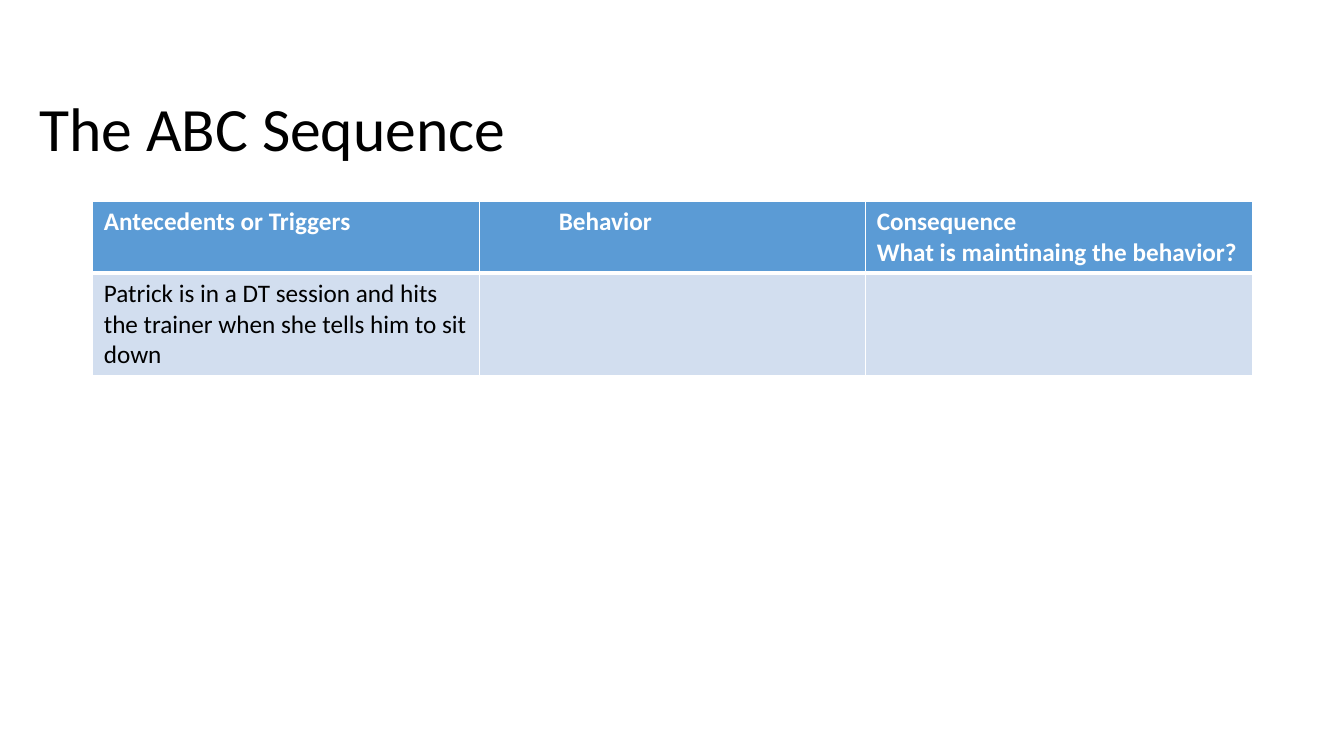
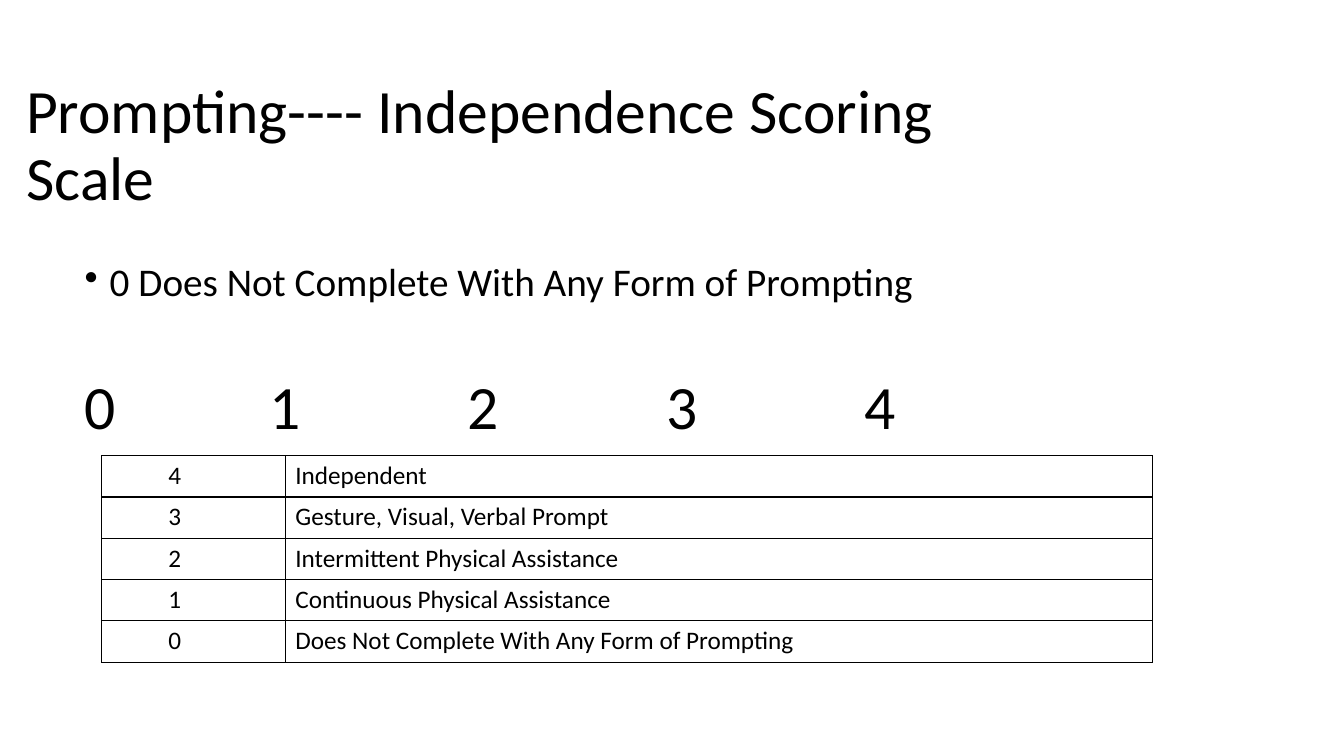
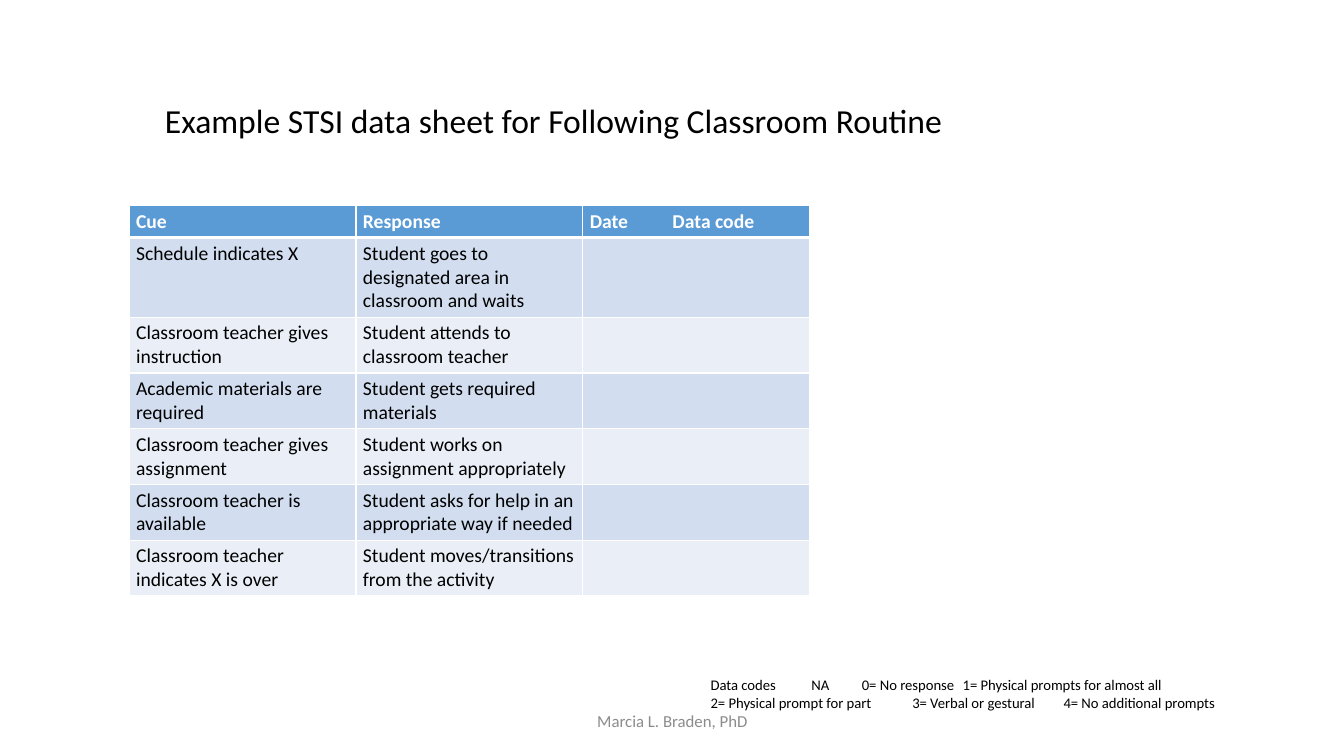
import pptx
import pptx.util
import pptx.dml.color
import pptx.enum.text
import pptx.oxml
import pptx.oxml.ns

Inches = pptx.util.Inches
Pt = pptx.util.Pt
RGBColor = pptx.dml.color.RGBColor
PP_ALIGN = pptx.enum.text.PP_ALIGN
MIDDLE = pptx.enum.text.MSO_ANCHOR.MIDDLE
qn = pptx.oxml.ns.qn

FONT = "Calibri"
BLACK = RGBColor(0x00, 0x00, 0x00)
WHITE = RGBColor(0xFF, 0xFF, 0xFF)
GREY = RGBColor(0x8C, 0x8C, 0x8C)
HEADER_BLUE = RGBColor(0x5B, 0x9B, 0xD5)
BANDS = (RGBColor(0xD2, 0xDE, 0xEF), RGBColor(0xEA, 0xEF, 0xF7))

ABC_ROWS = [
    ("Antecedents or Triggers", "Behavior",
     "Consequence\nWhat is maintinaing the behavior?"),
    ("Patrick is in a DT session and hits the trainer when she tells him to sit down", "", ""),
]
SCORES = [
    ("4", "Independent"),
    ("3", "Gesture, Visual, Verbal Prompt"),
    ("2", "Intermittent Physical Assistance"),
    ("1", "Continuous Physical Assistance"),
    ("0", "Does Not Complete With Any Form of Prompting"),
]
LOWEST_SCORE = "0 Does Not Complete With Any Form of Prompting"
ROUTINE_ROWS = [
    ("Cue", "Response", "Date\tData code"),
    ("Schedule indicates X", "Student goes to designated area in classroom and waits", ""),
    ("Classroom teacher gives instruction", "Student attends to classroom teacher", ""),
    ("Academic materials are required", "Student gets required materials", ""),
    ("Classroom teacher gives assignment", "Student works on assignment appropriately", ""),
    ("Classroom teacher is available", "Student asks for help in an appropriate way if needed", ""),
    ("Classroom teacher indicates X is over", "Student moves/transitions from the activity", ""),
]
DATA_CODES = [
    ("Data codes \tNA \t0= No response\t1= Physical prompts for almost all", (1, 1.5, 2.5)),
    ("2= Physical prompt for part\t3= Verbal or gestural\t4= No additional prompts", (2, 3.5)),
]
AUTHOR = "Marcia L. Braden, PhD"


def write(paragraph, text, size, color=BLACK, bold=False):
    run = paragraph.add_run()
    run.text = text
    run.font.name = FONT
    run.font.size = Pt(size)
    run.font.color.rgb = color
    run.font.bold = bold


def set_tabs(paragraph, stops):
    tabs = pptx.oxml.parse_xml(f"<a:tabLst {pptx.oxml.ns.nsdecls('a')}/>")
    for stop in stops:
        tab = tabs.makeelement(qn("a:tab"), {"pos": str(Inches(stop)), "algn": "l"})
        tabs.append(tab)
    paragraph._p.get_or_add_pPr().append(tabs)


def set_indent(paragraph, left, bullet=False):
    properties = paragraph._p.get_or_add_pPr()
    properties.set("marL", str(Inches(left)))
    properties.set("indent", str(-Inches(left) if bullet else 0))
    if bullet:
        properties.append(properties.makeelement(qn("a:buChar"), {"char": "•"}))


def set_borders(cell, color, widths):
    properties = cell._tc.get_or_add_tcPr()
    for side, width in zip("LRTB", widths):
        properties.append(pptx.oxml.parse_xml(
            f'<a:ln{side} {pptx.oxml.ns.nsdecls("a")} w="{Pt(width)}">'
            f'<a:solidFill><a:srgbClr val="{color}"/></a:solidFill></a:ln{side}>'))


def add_titled_slide(deck, title, box, size=44, align=PP_ALIGN.LEFT):
    slide = deck.slides.add_slide(deck.slide_layouts[5])
    heading = slide.shapes.title
    heading.left, heading.top, heading.width, heading.height = map(Inches, box)
    frame = heading.text_frame
    frame.auto_size = pptx.enum.text.MSO_AUTO_SIZE.NONE
    frame.vertical_anchor = MIDDLE
    paragraph = frame.paragraphs[0]
    paragraph.alignment = align
    paragraph.line_spacing = 0.9
    write(paragraph, title, size)
    return slide


def add_text_frame(slide, box):
    frame = slide.shapes.add_textbox(*map(Inches, box)).text_frame
    frame.word_wrap = True
    return frame


def add_grid(slide, rows, corner, widths, heights, size, margins=(0.1, 0.05), header=True):
    left, top = corner
    grid = slide.shapes.add_table(
        len(rows), len(widths), Inches(left), Inches(top),
        Inches(sum(widths)), Inches(sum(heights))).table
    grid.first_row = header
    grid.horz_banding = False
    for column, width in zip(grid.columns, widths):
        column.width = Inches(width)
    for r, (texts, height) in enumerate(zip(rows, heights)):
        grid.rows[r].height = Inches(height)
        in_header = header and r == 0
        for c, text in enumerate(texts):
            cell = grid.cell(r, c)
            cell.margin_left = cell.margin_right = Inches(margins[0])
            cell.margin_top = cell.margin_bottom = Inches(margins[1])
            if header:
                set_borders(cell, WHITE, (1, 1, 3 if r == 1 else 1, 3 if r == 0 else 1))
                cell.fill.solid()
                cell.fill.fore_color.rgb = HEADER_BLUE if in_header else BANDS[(r - 1) % 2]
            else:
                set_borders(cell, BLACK, (1, 1, 1, 1))
                cell.fill.background()
            for i, line in enumerate(text.split("\n") if text else ()):
                frame = cell.text_frame
                paragraph = frame.add_paragraph() if i else frame.paragraphs[0]
                write(paragraph, line, size, WHITE if in_header else BLACK, in_header)
    return grid


def build_abc(deck):
    slide = add_titled_slide(deck, "The ABC Sequence", (0.29, 0.72, 10.51, 1.18))
    grid = add_grid(slide, ABC_ROWS, (0.92, 2), [11.5 / 3] * 3, (0.7, 1), 18, (0.11, 0.05))
    set_indent(grid.cell(0, 1).text_frame.paragraphs[0], 0.68)


def build_scoring(deck):
    slide = add_titled_slide(deck, "Prompting---- Independence Scoring Scale",
                             (0.16, 0.87, 10.51, 1.18))
    frame = add_text_frame(slide, (0.74, 2.56, 11.47, 3.94))
    lowest, scale = frame.paragraphs[0], frame.add_paragraph()
    for paragraph, gap in ((lowest, 10), (scale, 51)):
        paragraph.line_spacing = 0.9
        paragraph.space_before = Pt(gap)
    set_indent(lowest, 0.25, bullet=True)
    write(lowest, LOWEST_SCORE, 28)
    set_tabs(scale, [1.83 + 1.97 * i for i in range(len(SCORES) - 1)])
    write(scale, "\t".join(score for score, _ in reversed(SCORES)), 44)
    grid = add_grid(slide, SCORES, (1.01, 4.52), (1.82, 8.6), [0.41] * len(SCORES), 18,
                    header=False)
    for r in range(len(SCORES)):
        set_indent(grid.cell(r, 0).text_frame.paragraphs[0], 0.56)


def build_routine(deck):
    slide = add_titled_slide(deck, "Example STSI data sheet for Following Classroom Routine",
                             (0.16, 0.75, 10.66, 0.94), 24, PP_ALIGN.CENTER)
    grid = add_grid(slide, ROUTINE_ROWS, (1.28, 2.04), [2.25] * 3,
                    [0.3, 0.78] + [0.54] * 5, 14, (0.07, 0.04))
    set_tabs(grid.cell(0, 2).text_frame.paragraphs[0], [0.82])
    footer = add_text_frame(slide, (4.42, 6.95, 4.5, 0.4))
    footer.vertical_anchor = MIDDLE
    footer.paragraphs[0].alignment = PP_ALIGN.CENTER
    write(footer.paragraphs[0], AUTHOR, 12, GREY)
    legend = add_text_frame(slide, (6.95, 6.66, 5.26, 0.45))
    for i, (codes, stops) in enumerate(DATA_CODES):
        paragraph = legend.add_paragraph() if i else legend.paragraphs[0]
        set_tabs(paragraph, stops)
        write(paragraph, codes, 10.5)


def main():
    deck = pptx.Presentation()
    deck.slide_width, deck.slide_height = Inches(13.33), Inches(7.5)
    for build in (build_abc, build_scoring, build_routine):
        build(deck)
    deck.save("out.pptx")


if __name__ == "__main__":
    main()
